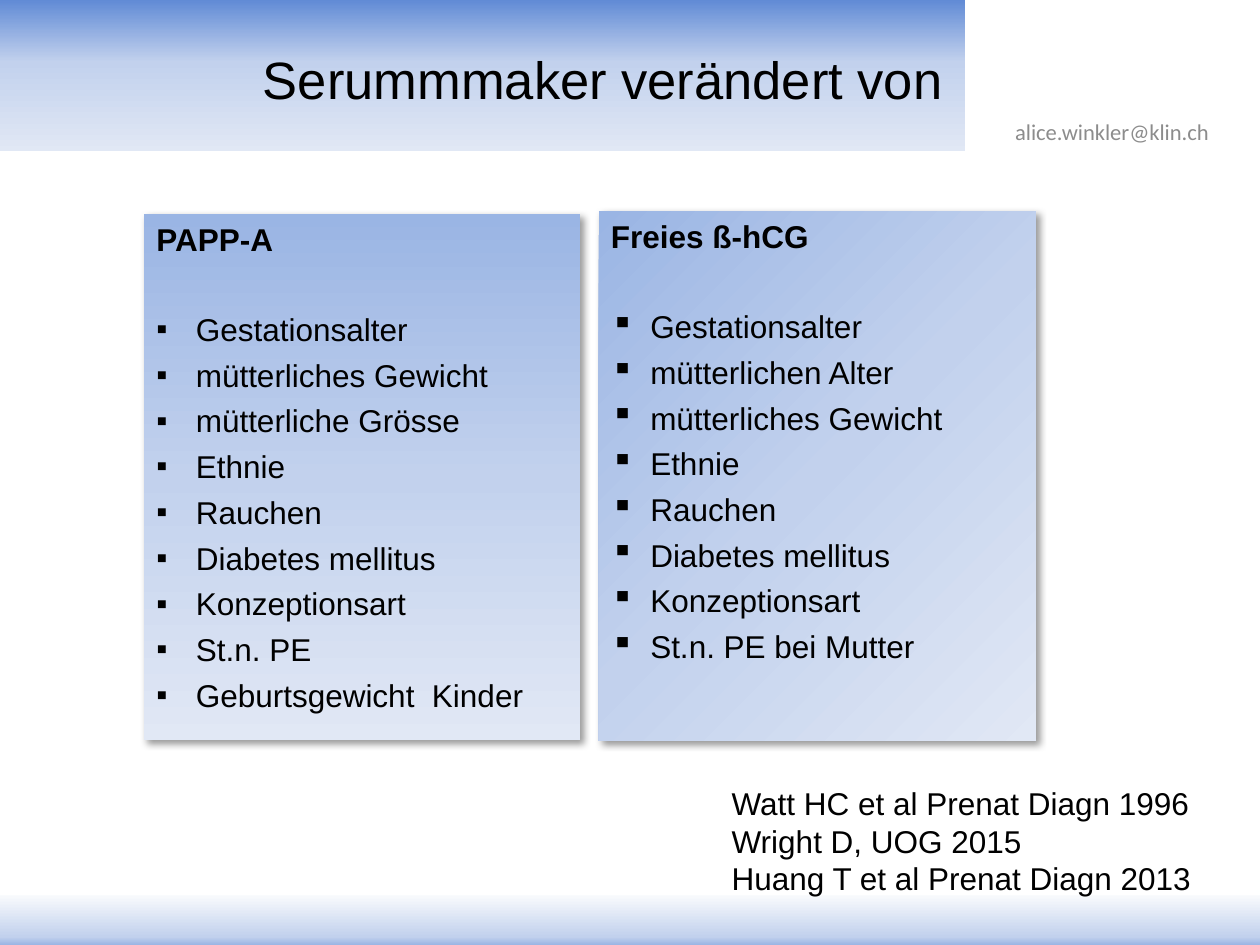
from copy import deepcopy

from pptx import Presentation
from pptx.dml.color import RGBColor
from pptx.enum.shapes import MSO_SHAPE as Preset
from pptx.enum.text import MSO_ANCHOR as Anchor, MSO_AUTO_SIZE as AutoSize, PP_ALIGN as Align
from pptx.oxml import parse_xml
from pptx.oxml.ns import nsdecls, qn
from pptx.util import Pt

# Content
TITLE = "Serummmaker verändert von"
CONTACT = "alice.winkler@klin.ch"
REFERENCES = [
    "Watt HC et al Prenat Diagn 1996",
    "Wright D, UOG 2015",
    "Huang T et al Prenat Diagn 2013",
]
PAPP_A = ("PAPP-A", [
    "Gestationsalter", "mütterliches Gewicht", "mütterliche Grösse", "Ethnie", "Rauchen",
    "Diabetes mellitus", "Konzeptionsart", "St.n. PE", "Geburtsgewicht  Kinder",
])
FREE_HCG = ("Freies ß-hCG", [
    "Gestationsalter", "mütterlichen Alter", "mütterliches Gewicht", "Ethnie", "Rauchen",
    "Diabetes mellitus", "Konzeptionsart", "St.n. PE bei Mutter",
])

# Gradients as (position, colour), and places as left, top, width, height in points
HEADER_STOPS = [(0, "618BD5"), (0.41, "C2D1ED"), (1, "E1E8F5")]
FOOTER_STOPS = [(0, "F9FBFD"), (0.84, "C2D1ED"), (1, "9AB5E4")]
PANEL_STOPS = [(0, "9AB5E4"), (0.5, "C2D1ED"), (1, "E1E8F5")]
HEADER_BOX = (0, 0, 551.5, 86.6)
FOOTER_BOX = (0, 511.2, 720, 28.8)
TITLE_BOX = (137.5, 0, 414, 90)
CONTACT_BOX = (564.5, 64, 141.8, 23)
PAPP_A_BOX = (82.2, 122.3, 249.3, 300.6)
FREE_HCG_BOX = (342, 120.7, 250, 302.6)
REFERENCES_BOX = (411, 444.3, 279.4, 72.7)
ITEM_GAP = 4.5
LIST_GAP = 29.7
BULLET_INDENT = 22.5


def color(hex_code):
    return RGBColor.from_string(hex_code)


def place(shape, box):
    shape.left, shape.top, shape.width, shape.height = map(Pt, box)


def fill_gradient(shape, stops, angle=90):
    shape.fill.gradient()
    shape.fill.gradient_angle = 360 - angle
    stop_list = shape.element.spPr.find(qn("a:gradFill")).find(qn("a:gsLst"))
    while len(stop_list) < len(stops):
        stop_list.append(deepcopy(stop_list[0]))
    for stop, (position, hex_code) in zip(shape.fill.gradient_stops, stops):
        stop.position = position
        stop.color.rgb = color(hex_code)
    shape.line.fill.background()
    shape.shadow.inherit = False


def add_rectangle(slide, box):
    return slide.shapes.add_shape(Preset.RECTANGLE, *map(Pt, box))


def add_shadow(shape):
    shape.element.spPr.find(qn("a:effectLst")).append(parse_xml(
        f'<a:outerShdw {nsdecls("a")} blurRad="{Pt(4)}" dist="{Pt(3)}" dir="2700000" '
        'algn="tl" rotWithShape="0"><a:srgbClr val="000000"><a:alpha val="40000"/>'
        '</a:srgbClr></a:outerShdw>'))


def write(frame, text, first=False, size=18, font="Arial", hex_code="000000",
          bold=False, align=Align.LEFT, before=0, bullet=None):
    """Write one paragraph; first=True uses the paragraph that is already there."""
    paragraph = frame.paragraphs[0] if first else frame.add_paragraph()
    paragraph.alignment = align
    paragraph.space_before = Pt(before)
    properties = paragraph._p.get_or_add_pPr()
    indent = Pt(BULLET_INDENT) if bullet else 0
    properties.set("marL", str(indent))
    properties.set("indent", str(-indent))
    mark = f'buChar {nsdecls("a")} char="{bullet}"' if bullet else f'buNone {nsdecls("a")}'
    properties.append(parse_xml(f"<a:{mark}/>"))
    run = paragraph.add_run()
    run.text = text
    run.font.size, run.font.name, run.font.bold = Pt(size), font, bold
    run.font.color.rgb = color(hex_code)


def fill_panel(shape, content, angle):
    fill_gradient(shape, PANEL_STOPS, angle)
    add_shadow(shape)
    heading, items = content
    frame = shape.text_frame
    frame.word_wrap = True
    frame.auto_size = AutoSize.NONE
    frame.vertical_anchor = Anchor.TOP
    write(frame, heading, first=True, bold=True)
    for index, item in enumerate(items):
        write(frame, item, before=ITEM_GAP if index else LIST_GAP, bullet="▪")


def main():
    presentation = Presentation()
    presentation.slide_width, presentation.slide_height = Pt(720), Pt(540)
    slide = presentation.slides.add_slide(presentation.slide_layouts[1])
    title, body = slide.placeholders

    # Header and footer bands
    for box, stops in ((HEADER_BOX, HEADER_STOPS), (FOOTER_BOX, FOOTER_STOPS)):
        fill_gradient(add_rectangle(slide, box), stops)

    # Contact address
    contact = slide.shapes.add_textbox(*map(Pt, CONTACT_BOX)).text_frame
    contact.word_wrap = True
    write(contact, CONTACT, first=True, size=12.9, font="Calibri",
          hex_code="8C8C8C", align=Align.CENTER)

    # Title and first list, brought in front of the bands
    for placeholder, box in ((title, TITLE_BOX), (body, PAPP_A_BOX)):
        place(placeholder, box)
        placeholder.element.getparent().append(placeholder.element)
    title.text_frame.auto_size = AutoSize.NONE
    title.text_frame.vertical_anchor = Anchor.MIDDLE
    write(title.text_frame, TITLE, first=True, size=30, align=Align.CENTER)
    fill_panel(body, PAPP_A, 90)

    # References
    references = slide.shapes.add_textbox(*map(Pt, REFERENCES_BOX)).text_frame
    references.word_wrap = False
    references.auto_size = AutoSize.SHAPE_TO_FIT_TEXT
    for index, reference in enumerate(REFERENCES):
        write(references, reference, first=index == 0)

    # Second list
    fill_panel(add_rectangle(slide, FREE_HCG_BOX), FREE_HCG, 45)

    presentation.save("out.pptx")


if __name__ == "__main__":
    main()
